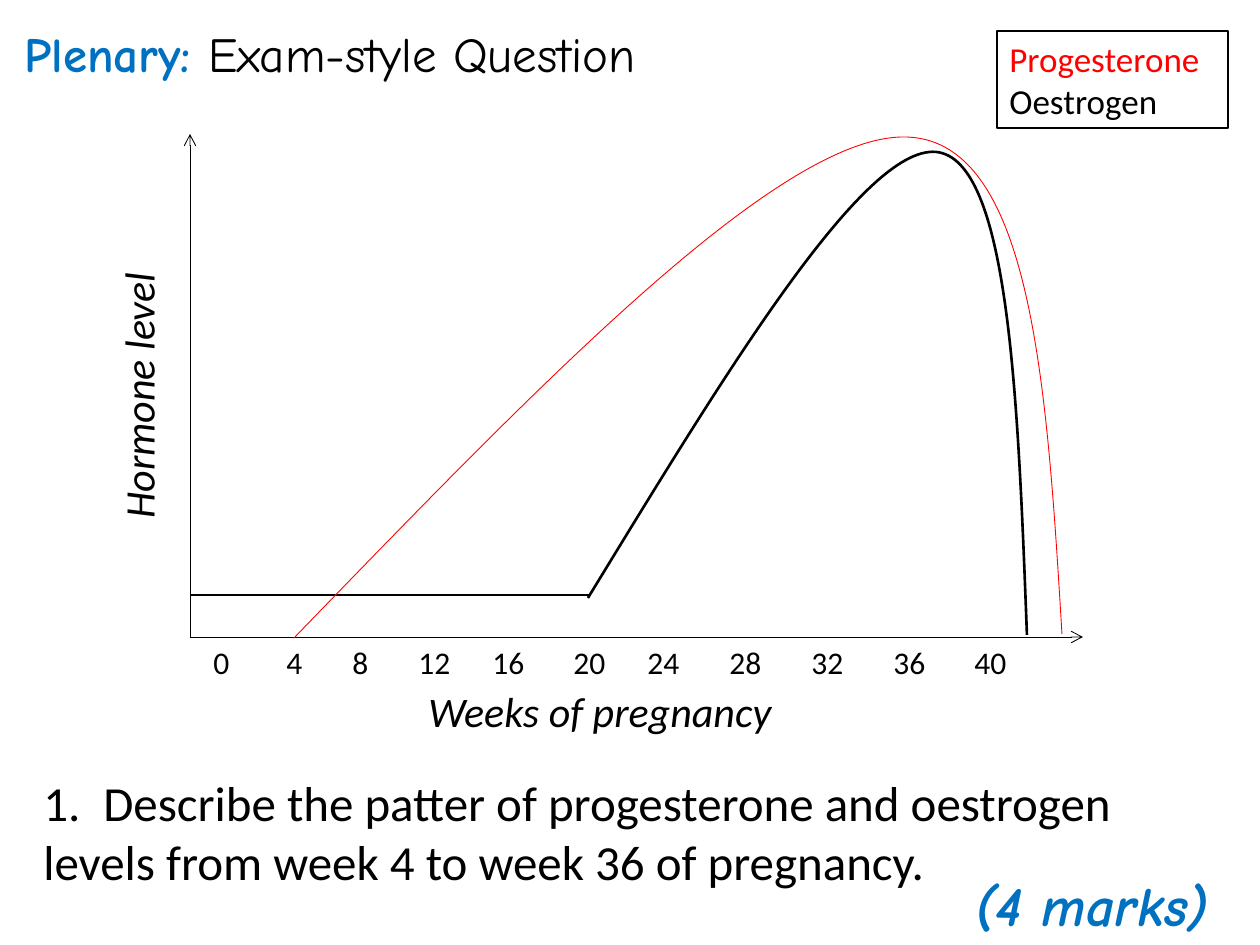
from dataclasses import dataclass

from lxml.etree import SubElement
from pptx import Presentation
from pptx.dml.color import RGBColor
from pptx.enum.shapes import MSO_CONNECTOR, MSO_SHAPE
from pptx.enum.text import MSO_ANCHOR, MSO_AUTO_SIZE, PP_ALIGN
from pptx.oxml.ns import qn
from pptx.util import Emu, Pt

Point = tuple[int, int]
Box = tuple[int, int, int, int]


@dataclass(frozen=True)
class Theme:
    black: RGBColor = RGBColor(0, 0, 0)
    blue: RGBColor = RGBColor(0x00, 0x70, 0xC0)
    red: RGBColor = RGBColor(0xFF, 0, 0)
    body_font: str = "Calibri"
    accent_font: str = "Comic Neue"
    tick_size: int = 18
    legend_size: int = 20
    axis_size: int = 24
    text_size: int = 28
    marks_size: int = 32
    thin: float = 0.5
    frame: float = 0.75
    thick: float = 1.5


THEME = Theme()


@dataclass(frozen=True)
class Label:
    text: str
    box: Box
    size: int
    font: str = THEME.body_font
    color: RGBColor = THEME.black
    bold: bool = False
    italic: bool = False
    align: PP_ALIGN = PP_ALIGN.LEFT
    rotation: int = 0
    tabs: tuple[int, ...] = ()


@dataclass(frozen=True)
class Line:
    start: Point
    end: Point
    width: float
    arrow: bool = False


@dataclass(frozen=True)
class Curve:
    points: tuple[Point, ...]
    color: RGBColor
    width: float


ORIGIN = (190, 637)
TICKS = "\t".join(str(week) for week in range(0, 41, 4))
TICK_STOPS = (73, 139, 205, 279, 360, 434, 516, 598, 680, 761)

LABELS = (
    Label("(4 marks)", (945, 864, 294, 81), THEME.marks_size, THEME.accent_font,
          THEME.blue, bold=True, italic=True, align=PP_ALIGN.CENTER),
    Label(TICKS, (201, 637, 882, 50), THEME.tick_size, tabs=TICK_STOPS),
    Label("Weeks of pregnancy", (411, 679, 378, 63), THEME.axis_size,
          italic=True, align=PP_ALIGN.CENTER),
    Label("Hormone level", (-51, 364, 378, 63), THEME.axis_size,
          italic=True, align=PP_ALIGN.CENTER, rotation=270),
    Label("1.\tDescribe the patter of progesterone and oestrogen levels "
          "from week 4 to week 36 of pregnancy.",
          (31, 766, 1166, 131), THEME.text_size, tabs=(60,)),
)
LINES = (
    Line(ORIGIN, (190, 134), THEME.thin, arrow=True),
    Line(ORIGIN, (1083, 637), THEME.thin, arrow=True),
    Line((190, 595), (590, 595), THEME.thick),
)
CURVES = (
    Curve(((588, 598), (726, 372), (863, 146), (936, 152),
           (1009, 159), (1018, 397), (1027, 635)), THEME.black, THEME.thick),
    Curve(((294, 638), (536, 388), (776, 138), (903, 137),
           (1032, 136), (1047, 386), (1062, 634)), THEME.red, THEME.thin),
)


def px(length: int) -> Emu:
    return Emu(round(length * 914400 / 126))


def set_font(font, size: int, name: str, color: RGBColor) -> None:
    font.size = Pt(size)
    font.name = name
    font.color.rgb = color


def add_tabs(para, stops: tuple[int, ...]) -> None:
    properties = para._p.get_or_add_pPr()
    tab_list = properties.makeelement(qn("a:tabLst"), {})
    properties.insert(0, tab_list)
    for stop in stops:
        SubElement(tab_list, qn("a:tab"), pos=str(px(stop)), algn="l")


def draw_title(page) -> None:
    title = page.shapes.title
    title.left, title.top, title.width, title.height = map(px, (12, 24, 1197, 58))
    frame = title.text_frame
    frame.auto_size = MSO_AUTO_SIZE.NONE
    frame.vertical_anchor = MSO_ANCHOR.TOP
    para = frame.paragraphs[0]
    para.alignment = PP_ALIGN.LEFT
    para.line_spacing = 0.9
    para.font.size = Pt(THEME.text_size)
    para.font.name = THEME.accent_font
    for text, color, bold in (("Plenary: ", THEME.blue, True),
                              ("Exam-style Question", THEME.black, False)):
        span = para.add_run()
        span.text = text
        span.font.color.rgb = color
        span.font.bold = bold


def draw_label(page, label: Label) -> None:
    box = page.shapes.add_textbox(*map(px, label.box))
    box.rotation = label.rotation
    box.text_frame.word_wrap = True
    para = box.text_frame.paragraphs[0]
    para.add_run().text = label.text
    para.alignment = label.align
    set_font(para.font, label.size, label.font, label.color)
    para.font.bold = label.bold
    para.font.italic = label.italic
    if label.tabs:
        add_tabs(para, label.tabs)


def draw_line(page, line: Line) -> None:
    connector = page.shapes.add_connector(
        MSO_CONNECTOR.STRAIGHT, *map(px, line.start + line.end))
    connector.line.color.rgb = THEME.black
    connector.line.width = Pt(line.width)
    if line.arrow:
        SubElement(connector.line._get_or_add_ln(), qn("a:tailEnd"), type="arrow")
    SubElement(connector._element.spPr, qn("a:effectLst"))


def bend_segments(shape) -> None:
    outline = next(shape._element.iter(qn("a:path")))
    segments = outline.findall(qn("a:lnTo"))
    for first in range(0, len(segments), 3):
        cubic = SubElement(outline, qn("a:cubicBezTo"))
        for segment in segments[first:first + 3]:
            cubic.append(segment[0])
            outline.remove(segment)


def draw_curve(page, curve: Curve) -> None:
    start, *rest = [(px(x), px(y)) for x, y in curve.points]
    builder = page.shapes.build_freeform(*start)
    builder.add_line_segments(rest, close=False)
    shape = builder.convert_to_shape()
    bend_segments(shape)
    shape.shadow.inherit = False
    shape.fill.background()
    shape.line.color.rgb = curve.color
    shape.line.width = Pt(curve.width)


def draw_legend(page) -> None:
    box = page.shapes.add_shape(MSO_SHAPE.RECTANGLE, *map(px, (997, 31, 231, 97)))
    box.shadow.inherit = False
    box.fill.background()
    box.line.color.rgb = THEME.black
    box.line.width = Pt(THEME.frame)
    frame = box.text_frame
    frame.text = "Progesterone\nOestrogen"
    for para, color in zip(frame.paragraphs, (THEME.red, THEME.black)):
        para.alignment = PP_ALIGN.LEFT
        set_font(para.font, THEME.legend_size, THEME.body_font, color)


def main() -> None:
    deck = Presentation()
    deck.slide_width, deck.slide_height = px(1260), px(945)
    page = deck.slides.add_slide(deck.slide_layouts[5])
    draw_title(page)
    for label in LABELS:
        draw_label(page, label)
    for line in LINES:
        draw_line(page, line)
    for curve in CURVES:
        draw_curve(page, curve)
    draw_legend(page)
    deck.save("out.pptx")


if __name__ == "__main__":
    main()
